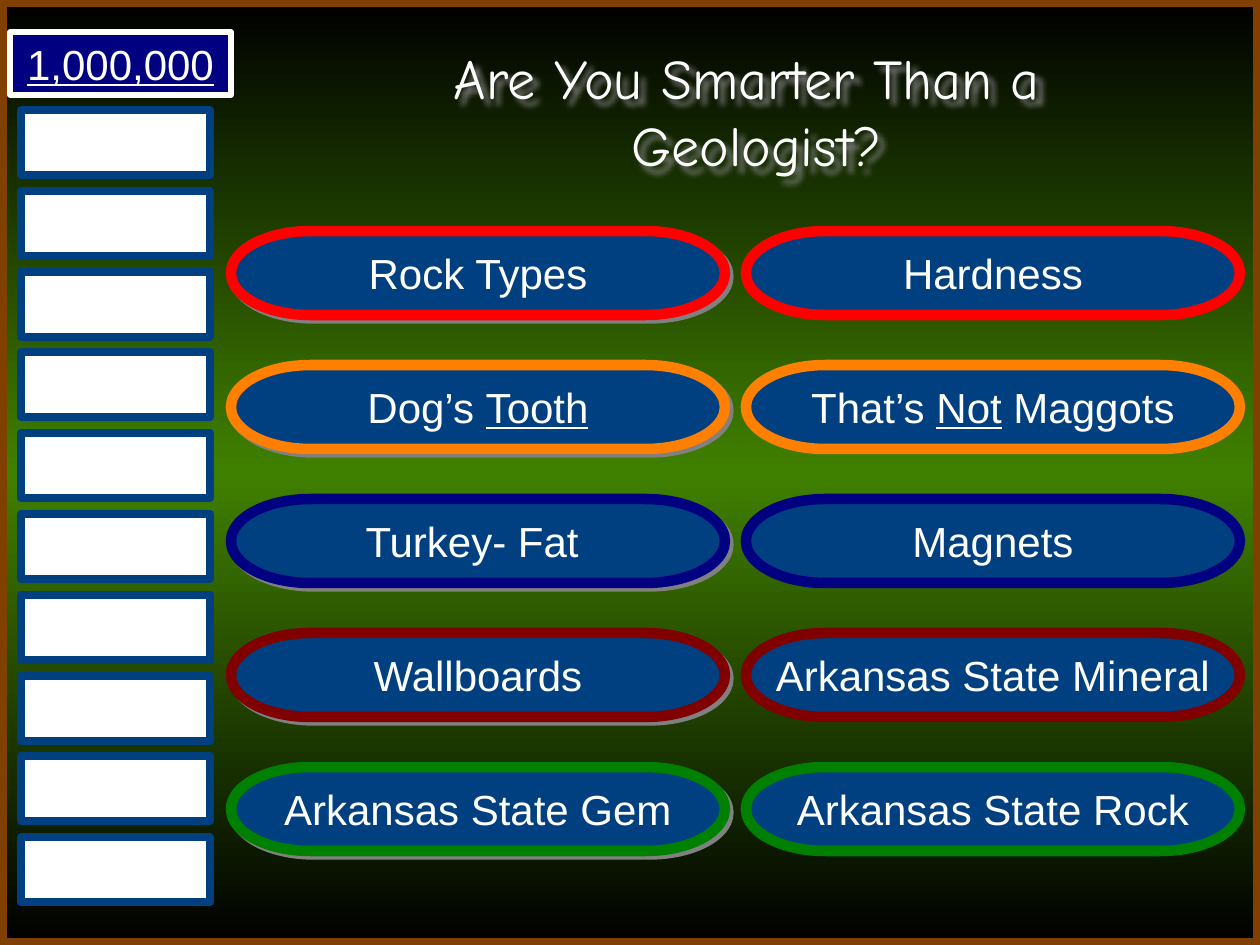
from copy import deepcopy
from lxml.etree import SubElement
from pptx import Presentation
from pptx.dml.color import RGBColor
from pptx.enum.shapes import MSO_SHAPE
from pptx.enum.text import MSO_ANCHOR, PP_ALIGN
from pptx.oxml.ns import qn
from pptx.util import Emu, Pt

SCALE = 914400 / 126  # EMU per px
WHITE = RGBColor(0xFF, 0xFF, 0xFF)
BLACK = RGBColor(0, 0, 0)
GREY = RGBColor(0x80, 0x80, 0x80)
BLUE = RGBColor(0, 0x40, 0x80)
NAVY = RGBColor(0, 0, 0x80)
RED = RGBColor(0xFF, 0, 0)
ORANGE = RGBColor(0xFF, 0x80, 0)
MAROON = RGBColor(0x80, 0, 0)
GREEN = RGBColor(0, 0x80, 0)
MOSS = RGBColor(0x40, 0x80, 0)
BROWN = RGBColor(0x80, 0x40, 0)


def px(n):
    return Emu(round(n * SCALE))


class Board:
    font = "Arial"
    size = 24

    def __init__(self, deck):
        self.slide = deck.slides.add_slide(deck.slide_layouts[5])

    def backdrop(self, edge, middle):
        fill = self.slide.background.fill
        fill.gradient()
        fill.gradient_angle = 270
        stops = self.slide.element.find(".//" + qn("a:gsLst"))
        stops.insert(1, deepcopy(stops[0]))
        for stop, color, spot in zip(fill.gradient_stops, (edge, middle, edge), (0, 0.5, 1)):
            stop.color.rgb = color
            stop.position = spot

    def shadow(self, shape, dist, blur=0):
        shape.shadow.inherit = False
        effects = shape.element.spPr.find(qn("a:effectLst"))
        cast = SubElement(effects, qn("a:outerShdw"), blurRad=str(Pt(blur)),
                          dist=str(Pt(dist)), dir="2700000", algn="ctr", rotWithShape="0")
        SubElement(cast, qn("a:srgbClr"), val=str(GREY))

    def title(self, text, x, y, w, h):
        shape = self.slide.shapes.title
        shape.left, shape.top, shape.width, shape.height = map(px, (x, y, w, h))
        frame = shape.text_frame
        frame.text = text
        frame.word_wrap = True
        frame.vertical_anchor = MSO_ANCHOR.MIDDLE
        para = frame.paragraphs[0]
        para.alignment = PP_ALIGN.CENTER
        para.font.name = "Comic Neue"
        para.font.size = Pt(32)
        para.font.color.rgb = WHITE
        self.shadow(shape, 4, 3)

    def box(self, x, y, w, h, fill, line, weight, kind=MSO_SHAPE.RECTANGLE):
        shape = self.slide.shapes.add_shape(kind, *map(px, (x, y, w, h)))
        shape.shadow.inherit = False
        if fill is None:
            shape.fill.background()
        else:
            shape.fill.solid()
            shape.fill.fore_color.rgb = fill
        shape.line.color.rgb = line
        shape.line.width = Pt(weight)
        return shape

    def label(self, shape, text):
        """Write centred text; parts between underscores are underlined."""
        frame = shape.text_frame
        frame.word_wrap = False
        frame.vertical_anchor = MSO_ANCHOR.MIDDLE
        para = frame.paragraphs[0]
        para.alignment = PP_ALIGN.CENTER
        para.font.name = self.font
        para.font.size = Pt(self.size)
        para.font.color.rgb = WHITE
        for i, part in enumerate(text.split("_")):
            if part:
                run = para.add_run()
                run.text = part
                if i % 2:
                    run.font.underline = True

    def pill(self, text, x, y, line):
        shape = self.box(x, y, 494, 84, BLUE, line, 6, MSO_SHAPE.FLOWCHART_TERMINATOR)
        self.label(shape, text)
        return shape


def main():
    deck = Presentation()
    deck.slide_width, deck.slide_height = px(1260), px(945)
    board = Board(deck)
    board.backdrop(BLACK, MOSS)

    # Title and top prize
    board.title("Are You Smarter Than a \vGeologist?", 284, 32, 945, 158)
    prize = board.box(10, 32, 221, 63, NAVY, WHITE, 3)
    board.label(prize, "_1,000,000_")

    # Topics, two to a level
    levels = [
        ("Rock Types", "Hardness", RED),
        ("Dog’s _Tooth_", "That’s _Not_ Maggots", ORANGE),
        ("Turkey- Fat ", "Magnets", NAVY),
        ("Wallboards", "Arkansas State Mineral", MAROON),
        ("Arkansas State Gem", "Arkansas State Rock", GREEN),
    ]
    for row, (left, right, color) in enumerate(levels):
        y = 231 + 134 * row
        board.shadow(board.pill(left, 231, y, color), 2.8)
        board.pill(right, 746, y, color)

    # Prize ladder
    for step in range(10):
        board.box(21, 110 + round(80.8 * step), 189, 65, WHITE, BLUE, 4.5)

    # Frame
    board.box(0, 0, 1260, 945, None, BROWN, 8)
    deck.save("out.pptx")


if __name__ == "__main__":
    main()
